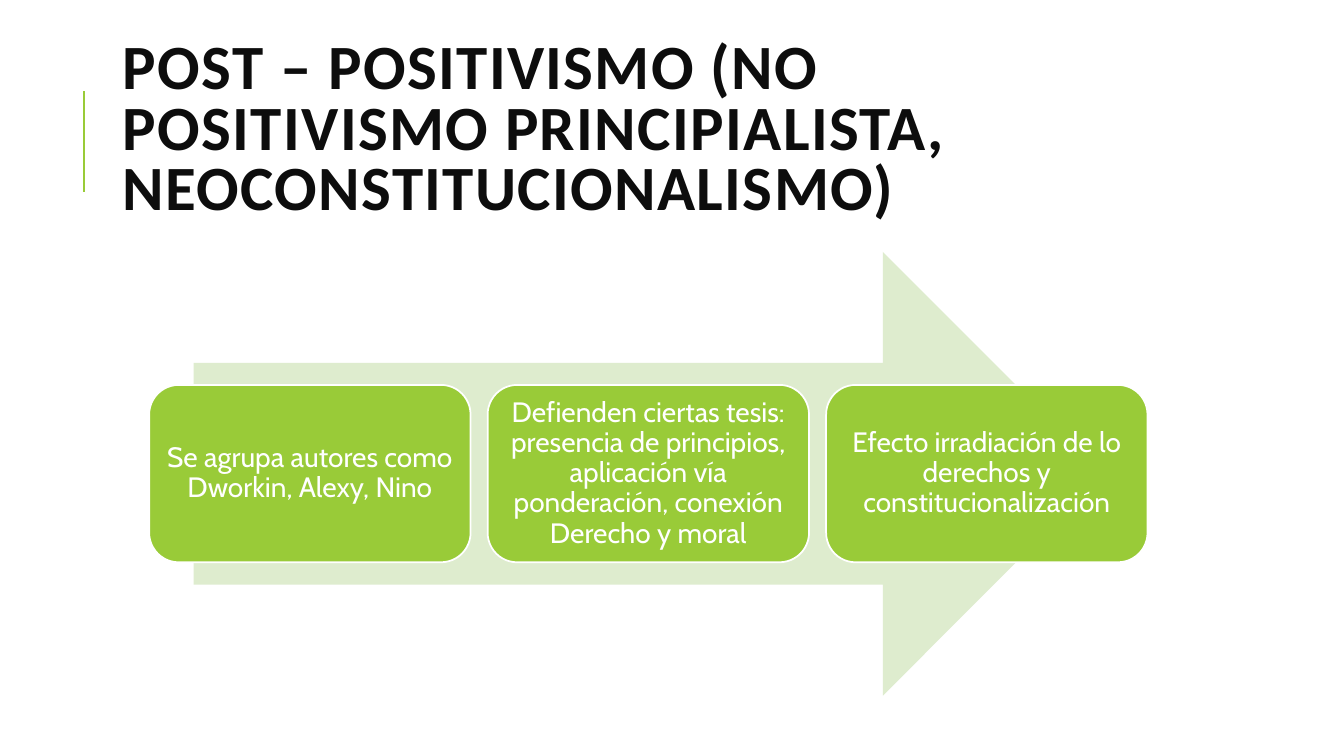
from pptx import Presentation
from pptx.dml.color import RGBColor
from pptx.enum.shapes import MSO_CONNECTOR, MSO_SHAPE
from pptx.enum.text import MSO_ANCHOR, MSO_AUTO_SIZE, PP_ALIGN
from pptx.oxml.ns import qn
from pptx.util import Cm, Pt
from lxml.etree import SubElement

GREEN = RGBColor(0x99, 0xCB, 0x38)
PALE_GREEN = RGBColor(0xDE, 0xEC, 0xCE)
WHITE = RGBColor(0xFF, 0xFF, 0xFF)
BLACK = RGBColor(0x0D, 0x0D, 0x0D)


def write(tf, text, font, size, color, align, spacing, bold=False, tracking=0):
    tf.word_wrap = True
    tf.auto_size = MSO_AUTO_SIZE.NONE
    tf.vertical_anchor = MSO_ANCHOR.MIDDLE
    p = tf.paragraphs[0]
    p.alignment = align
    p.line_spacing = spacing
    r = p.add_run()
    r.text = text
    r.font.name = font
    r.font.size = Pt(size)
    r.font.bold = bold
    r.font.color.rgb = color
    if tracking:
        r.font._element.set("spc", str(tracking * 100))


prs = Presentation()
prs.slide_width = Cm(33.87)
prs.slide_height = Cm(19.05)
s = prs.slides.add_slide(prs.slide_layouts[5])

rule = s.shapes.add_connector(MSO_CONNECTOR.STRAIGHT, Cm(2.12), Cm(4.83), Cm(2.12), Cm(2.29))
rule.line.color.rgb = GREEN
rule.line.width = Pt(1.5)
SubElement(rule._element.spPr, qn("a:effectLst"))

title = s.shapes.title
title.left, title.top, title.width, title.height = Cm(2.84), Cm(0.86), Cm(27), Cm(4.93)
write(title.text_frame, "POST – POSITIVISMO (NO POSITIVISMO PRINCIPIALISTA, NEOCONSTITUCIONALISMO)",
      font="Calibri", size=45, color=BLACK, align=PP_ALIGN.LEFT, spacing=0.8, bold=True, tracking=1)

arrow = s.shapes.add_shape(MSO_SHAPE.RIGHT_ARROW, Cm(4.88), Cm(6.35), Cm(22.96), Cm(11.18))
arrow.shadow.inherit = False
arrow.fill.solid()
arrow.fill.fore_color.rgb = PALE_GREEN
arrow.line.fill.background()

ideas = [
    "Se agrupa autores como Dworkin, Alexy, Nino",
    "Defienden ciertas tesis: presencia de principios, aplicación vía ponderación, conexión Derecho y moral",
    "Efecto irradiación de lo derechos y constitucionalización",
]
for i, idea in enumerate(ideas):
    box = s.shapes.add_shape(MSO_SHAPE.ROUNDED_RECTANGLE, Cm(3.76 + 8.53 * i), Cm(9.7), Cm(8.1), Cm(4.47))
    box.shadow.inherit = False
    box.fill.solid()
    box.fill.fore_color.rgb = GREEN
    box.line.color.rgb = WHITE
    box.line.width = Pt(1.25)
    tf = box.text_frame
    tf.margin_left = tf.margin_right = tf.margin_top = tf.margin_bottom = Cm(0.2)
    write(tf, idea, font="Cabin", size=20, color=WHITE, align=PP_ALIGN.CENTER, spacing=0.9)

prs.save("out.pptx")
